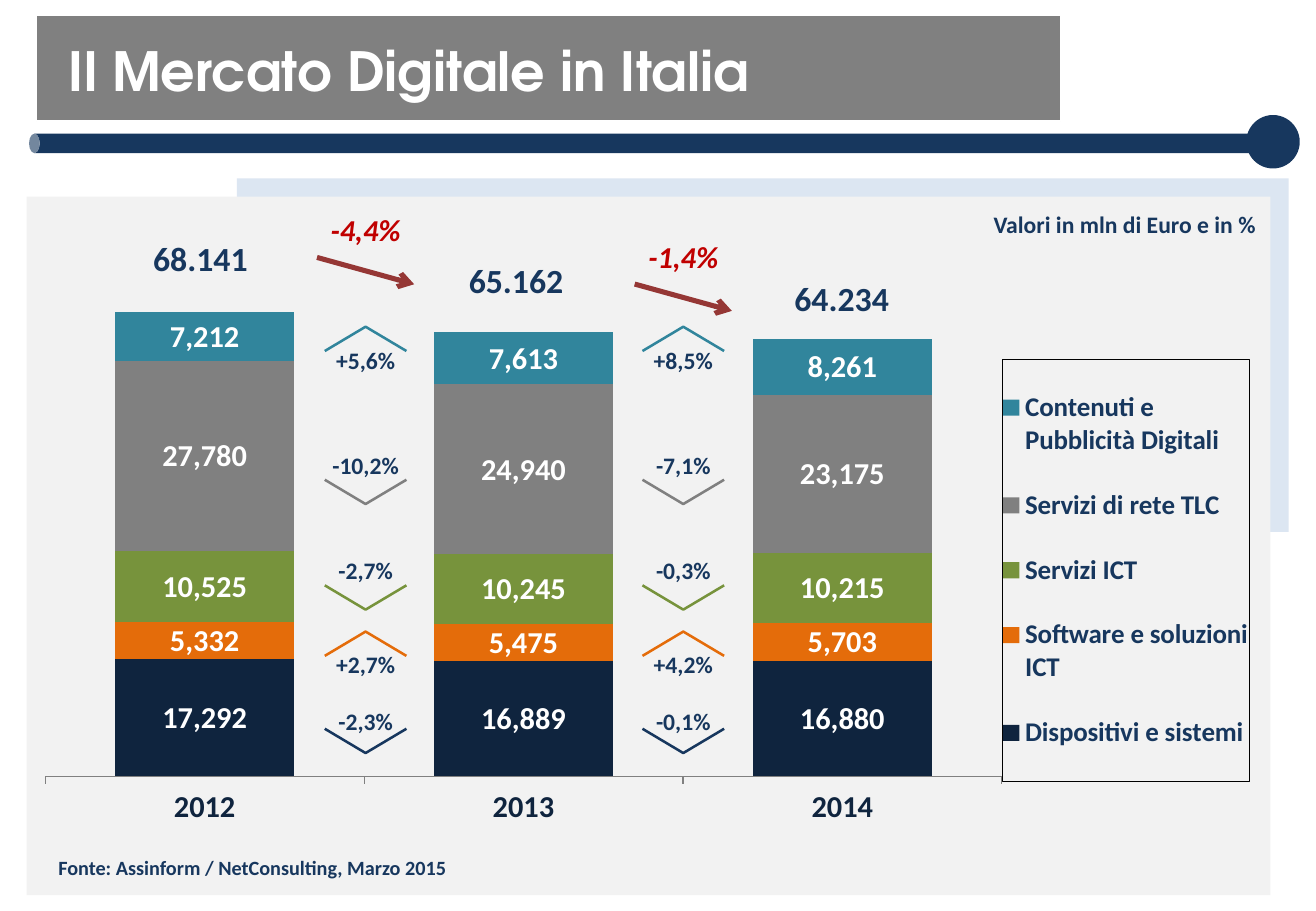
import lxml.etree
import pptx
import pptx.chart.data
import pptx.dml.color
import pptx.enum.chart
import pptx.enum.shapes
import pptx.enum.text
import pptx.oxml
import pptx.oxml.ns
import pptx.util

Pt = pptx.util.Pt
SHAPE = pptx.enum.shapes.MSO_SHAPE
NAVY, DARK_NAVY, GREY, WHITE = "17375E", "0F243E", "808080", "FFFFFF"
ORANGE, GREEN, TEAL = "E46C0A", "77933C", "31859C"
rgb = pptx.dml.color.RGBColor.from_string
qn = pptx.oxml.ns.qn

prs = pptx.Presentation()
prs.slide_width, prs.slide_height = Pt(780), Pt(540)
slide = prs.slides.add_slide(prs.slide_layouts[6])
shapes = slide.shapes


def add_label(text, center, top, width, size, color=NAVY, italic=False):
    """Add a bold one-line text centred on the given x position."""
    box = shapes.add_textbox(Pt(center - width / 2), Pt(top), Pt(width), Pt(size * 1.2 + 7.2))
    box.text_frame.word_wrap = False
    paragraph = box.text_frame.paragraphs[0]
    paragraph.text = text
    paragraph.alignment = pptx.enum.text.PP_ALIGN.CENTER
    font = paragraph.runs[0].font
    font.name, font.size, font.bold, font.italic = "Calibri", Pt(size), True, italic
    font.color.rgb = rgb(color)


def set_layout(parent, index, x, y, w, h, inner=False):
    """Place a chart part by fractions of the chart area."""
    for old in parent.findall(qn("c:layout")):
        parent.remove(old)
    target = '<c:layoutTarget val="inner"/>' if inner else ""
    parent.insert(index, pptx.oxml.parse_xml(
        f'<c:layout {pptx.oxml.ns.nsdecls("c")}><c:manualLayout>{target}'
        '<c:xMode val="edge"/><c:yMode val="edge"/>'
        f'<c:x val="{x}"/><c:y val="{y}"/><c:w val="{w}"/><c:h val="{h}"/>'
        "</c:manualLayout></c:layout>"))


# Title band, rule and panels
for kind, left, top, width, height, color in (
    (SHAPE.CAN, 375.1, -278.6, 11.5, 727.2, NAVY),
    (SHAPE.RECTANGLE, 21.6, 9.4, 607, 62.4, GREY),
    (SHAPE.OVAL, 738.7, 68.2, 31.7, 31.7, NAVY),
    (SHAPE.RECTANGLE, 140.4, 105.8, 623.5, 209.5, "DCE6F2"),
    (SHAPE.RECTANGLE, 15.8, 116.6, 737.3, 414, "F2F2F2"),
):
    part = shapes.add_shape(kind, Pt(left), Pt(top), Pt(width), Pt(height))
    part.shadow.inherit = False
    part.fill.solid()
    part.fill.fore_color.rgb = rgb(color)
    part.line.fill.background()
    if kind == SHAPE.CAN:
        part.rotation = 270
        part.adjustments[0] = 0.55
    if color == GREY:
        part.line.color.rgb = rgb(WHITE)
        part.line.width = Pt(0.75)

title = shapes.add_textbox(Pt(33.8), Pt(25.9), Pt(735), Pt(72))
title.text_frame.word_wrap = True
heading = title.text_frame.paragraphs[0]
heading.text = "Il Mercato Digitale in Italia"
heading.line_spacing = 0.8
heading_font = heading.runs[0].font
heading_font.name, heading_font.size, heading_font.bold = "TeX Gyre Adventor", Pt(32), True
heading_font.color.rgb = rgb(WHITE)

# Stacked market values
segments = (
    ("Dispositivi e sistemi", DARK_NAVY, (17292, 16889, 16880)),
    ("Software e soluzioni ICT", ORANGE, (5332, 5475, 5703)),
    ("Servizi ICT", GREEN, (10525, 10245, 10215)),
    ("Servizi di rete TLC", GREY, (27780, 24940, 23175)),
    ("Contenuti e Pubblicità Digitali", TEAL, (7212, 7613, 8261)),
)
market = pptx.chart.data.CategoryChartData(number_format="#,##0")
market.categories = ["2012", "2013", "2014"]
for name, _, values in segments:
    market.add_series(name, values)
chart = shapes.add_chart(
    pptx.enum.chart.XL_CHART_TYPE.COLUMN_STACKED,
    Pt(15.8), Pt(126), Pt(737.3), Pt(371.5), market).chart
chart.has_title = False
chart.font.name, chart.font.size = "Arial", Pt(18)
chart.font.color.rgb = rgb("000000")
plot = chart.plots[0]
plot.gap_width, plot.overlap, plot.vary_by_categories = 78, 100, False
for series, (_, color, _) in zip(plot.series, segments):
    series.format.fill.solid()
    series.format.fill.fore_color.rgb = rgb(color)
    labels = series.data_labels
    labels.show_value = True
    labels.number_format, labels.number_format_is_linked = "#,##0", False
    labels.font.name, labels.font.size, labels.font.bold = "Calibri", Pt(18), True
    labels.font.color.rgb = rgb(WHITE)

values_axis, years_axis = chart.value_axis, chart.category_axis
values_axis.minimum_scale, values_axis.maximum_scale = 0, 80000
values_axis.has_major_gridlines = False
values_axis.visible = False
years_axis.major_tick_mark = pptx.enum.chart.XL_TICK_MARK.OUTSIDE
years_axis.format.line.color.rgb = rgb(GREY)
years_font = years_axis.tick_labels.font
years_font.name, years_font.size, years_font.bold = "Calibri", Pt(18), True
years_font.color.rgb = rgb(DARK_NAVY)

chart.has_legend = True
legend = chart.legend
legend.position = pptx.enum.chart.XL_LEGEND_POSITION.RIGHT
legend.include_in_layout = False
legend.font.name, legend.font.size, legend.font.bold = "Calibri", Pt(16), True
legend.font.color.rgb = rgb(NAVY)
legend_xml = legend._element
set_layout(legend_xml, 1, 0.784, 0.234, 0.199, 0.674)
legend_xml.find(qn("c:overlay")).addnext(pptx.oxml.parse_xml(
    f'<c:spPr {pptx.oxml.ns.nsdecls("c", "a")}><a:ln w="3175"><a:solidFill>'
    '<a:srgbClr val="000000"/></a:solidFill></a:ln></c:spPr>'))
set_layout(chart._chartSpace.chart.plotArea, 0, 0.015, 0.03, 0.769, 0.87, inner=True)

# Yearly totals and notes
for total, center, top in (("68.141", 118.8, 137.5), ("65.162", 305.9, 150.5),
                           ("64.234", 498.9, 160.9)):
    add_label(total, center, top, 71.3, 20)
add_label("Valori in mln di Euro e in %", 666.6, 121, 171.4, 14)
add_label("Fonte: Assinform / NetConsulting, Marzo 2015", 149.7, 503.3, 250.6, 12)

# Changes between years: total arrow, then one chevron per segment
chevrons = (  # colour, chevron top, label top, rising
    (NAVY, 432, 415.4, False),
    (ORANGE, 374.4, 381.6, True),
    (GREEN, 347, 326.2, False),
    (GREY, 284.4, 263.5, False),
    (TEAL, 193.7, 201.2, True),
)
for center, drop, total_change, changes in (
    (216.7, 0, "-4,4%", ("-2,3%", "+2,7%", "-2,7%", "-10,2%", "+5,6%")),
    (405, 15.8, "-1,4%", ("-0,1%", "+4,2%", "-0,3%", "-7,1%", "+8,5%")),
):
    add_label(total_change, center, 121.7 + drop, 56, 18, "C00000", italic=True)
    arrow = shapes.add_connector(
        pptx.enum.shapes.MSO_CONNECTOR.STRAIGHT,
        Pt(center - 28.8), Pt(152.6 + drop), Pt(center + 28.8), Pt(168.5 + drop))
    arrow.line.color.rgb = rgb("953735")
    arrow.line.width = Pt(3)
    lxml.etree.SubElement(arrow.line._get_or_add_ln(), qn("a:tailEnd"), type="arrow")
    lxml.etree.SubElement(arrow._element.spPr, qn("a:effectLst"))

    for change, (color, top, label_top, rising) in zip(changes, chevrons):
        ends, tip = (top + 14.4, top) if rising else (top, top + 14.4)
        outline = shapes.build_freeform(Pt(center - 24.2), Pt(ends))
        outline.add_line_segments(
            [(Pt(center), Pt(tip)), (Pt(center + 24.2), Pt(ends))], close=False)
        chevron = outline.convert_to_shape()
        chevron.shadow.inherit = False
        chevron.fill.background()
        chevron.line.color.rgb = rgb(color)
        chevron.line.width = Pt(1.5)
        add_label(change, center, label_top, 60, 14)

prs.save("out.pptx")
